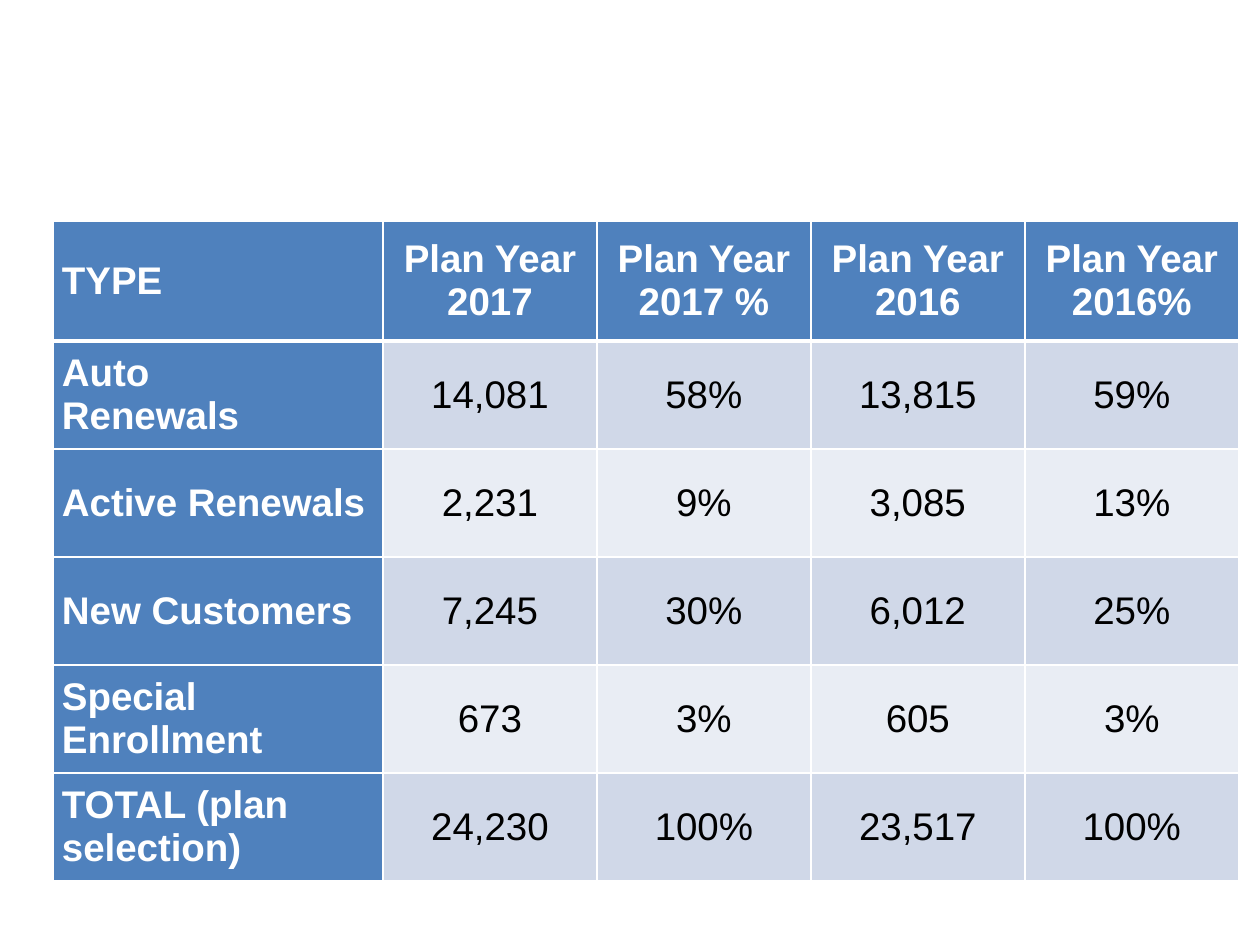
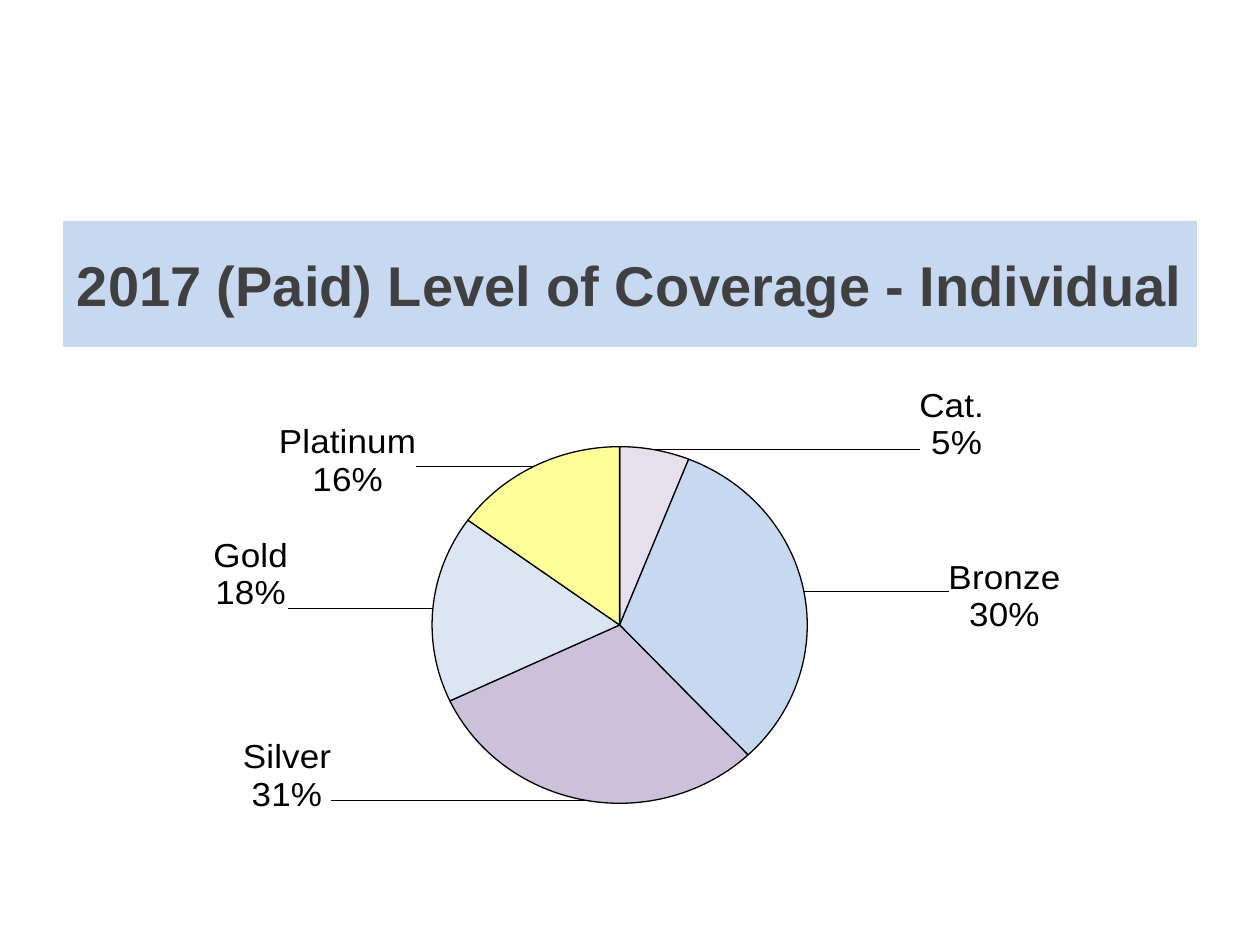
from dataclasses import dataclass

from lxml import etree
from pptx import Presentation
from pptx import util as u
from pptx.chart.data import CategoryChartData
from pptx.dml.color import RGBColor
from pptx.enum import chart as ch, text
from pptx.oxml import ns

# Shared scale, font and colours
PX = u.Inches(1) / 126
FONT = "Arial"
WHITE, BLACK, GREY = "FFFFFF", "000000", "404040"
BLUE, PALE = "4F81BD", "C6D9F1"
BANDS = ("D0D8E8", "E9EDF4")

# Plan table
COLS = [330] + [214] * 4
ROWS = [120] + [108] * 5
PLANS = [
    ("TYPE", "Plan Year 2017", "Plan Year 2017 %", "Plan Year 2016", "Plan Year 2016%"),
    ("Auto \nRenewals", "14,081", "58%", "13,815", "59%"),
    ("Active Renewals", "2,231", "9%", "3,085", "13%"),
    ("New Customers", "7,245", "30%", "6,012", "25%"),
    ("Special Enrollment", "673", "3%", "605", "3%"),
    ("TOTAL (plan selection)", "24,230", "100%", "23,517", "100%"),
]


@dataclass
class Slice:
    name: str
    value: int
    fill: str
    label: str
    dx: float  # label shift, as a share of the chart
    dy: float


LEVELS = [
    Slice("Catastrophic", 6, "E6E0EC", "Cat. \n5%", 0.23, 0.04),
    Slice("Bronze", 32, PALE, "Bronze\n30%", 0.12, 0.09),
    Slice("Silver", 30, "CCC1DA", "Silver\n31%", -0.22, -0.14),
    Slice("Gold", 17, "DCE6F2", "Gold\n18%", -0.12, 0.01),
    Slice("Platinum", 15, "FFFF99", "Platinum\n16%", -0.1, 0.08),
]


def px(n: float) -> int:
    return round(n * PX)


def rgb(code: str) -> RGBColor:
    return RGBColor.from_string(code)


def paint(part, code: str) -> None:
    part.fill.solid()
    part.fill.fore_color.rgb = rgb(code)


def style(frame, size: int, code: str, bold: bool, align=None) -> None:
    """Format every run of a text frame."""
    for para in frame.paragraphs:
        para.alignment = align
        for run in para.runs:
            font = run.font
            font.name, font.size, font.bold = FONT, u.Pt(size), bold
            font.color.rgb = rgb(code)


def edge(cell, side: str, width: int) -> None:
    """Draw one white cell border."""
    line = etree.SubElement(cell._tc.get_or_add_tcPr(), ns.qn(f"a:ln{side}"),
                            w=str(u.Pt(width)))
    fill = etree.SubElement(line, ns.qn("a:solidFill"))
    etree.SubElement(fill, ns.qn("a:srgbClr"), val=WHITE)


def place(parent, after, spots: dict) -> None:
    """Add a manual chart layout, first in its parent or after a child."""
    box = etree.Element(ns.qn("c:layout"))
    man = etree.SubElement(box, ns.qn("c:manualLayout"))
    for key, val in spots.items():
        etree.SubElement(man, ns.qn(f"c:{key}"), val=str(val))
    if after is None:
        for old in parent.findall(ns.qn("c:layout")):
            parent.remove(old)
        parent.insert(0, box)
    else:
        after.addnext(box)


def add_plans(slide) -> None:
    frame = slide.shapes.add_table(len(ROWS), len(COLS), px(53), px(221),
                                   px(sum(COLS)), px(sum(ROWS)))
    table = frame.table
    for col, wide in zip(table.columns, COLS):
        col.width = px(wide)
    for r, (row, high) in enumerate(zip(table.rows, ROWS)):
        row.height = px(high)
        for c, cell in enumerate(row.cells):
            head = r == 0 or c == 0
            cell.text_frame.paragraphs[0].text = PLANS[r][c]
            style(cell.text_frame, 22, WHITE if head else BLACK, head,
                  text.PP_ALIGN.CENTER if c else None)
            cell.vertical_anchor = text.MSO_ANCHOR.MIDDLE
            cell.margin_left = cell.margin_right = px(9)
            cell.margin_top = cell.margin_bottom = 0
            for side in "LRTB":
                thick = (r, side) in ((0, "B"), (1, "T"))
                edge(cell, side, 3 if thick else 1)
            paint(cell, BLUE if head else BANDS[(r - 1) % 2])


def add_title(slide, words: str) -> None:
    title = slide.shapes.title
    title.left, title.top, title.width, title.height = map(px, (63, 221, 1134, 126))
    paint(title, PALE)
    frame = title.text_frame
    frame.text = words
    frame.word_wrap = True
    frame.auto_size = text.MSO_AUTO_SIZE.NONE
    frame.margin_left = frame.margin_right = px(9)
    frame.vertical_anchor = text.MSO_ANCHOR.MIDDLE
    style(frame, 32, GREY, True, text.PP_ALIGN.CENTER)


def add_pie(slide) -> None:
    data = CategoryChartData(number_format="#,##0")
    data.categories = [lev.name for lev in LEVELS]
    data.add_series("Series 1", [lev.value for lev in LEVELS])
    chart = slide.shapes.add_chart(ch.XL_CHART_TYPE.PIE, px(42), px(368),
                                   px(1144), px(514), data).chart
    chart.has_title = chart.has_legend = False
    chart.font.name, chart.font.size = FONT, u.Pt(20)
    chart.font.color.rgb = rgb(BLACK)
    plot = chart.plots[0]
    plot.vary_by_categories = True
    area = chart._chartSpace.find(".//" + ns.qn("c:plotArea"))
    place(area, None, {"layoutTarget": "inner", "xMode": "edge", "yMode": "edge",
                       "x": 0.34, "y": 0.13, "w": 0.33, "h": 0.73})

    # Slices and their labels
    pie = plot.series[0]
    for i, lev in enumerate(LEVELS):
        point = pie.points[i]
        paint(point.format, lev.fill)
        point.format.line.color.rgb = rgb(BLACK)
        point.format.line.width = u.Pt(0.75)
        label = point.data_label
        label.text_frame.text = lev.label
        style(label.text_frame, 20, BLACK, False)
        label.position = ch.XL_LABEL_POSITION.OUTSIDE_END
    for tag, lev in zip(pie._element.iter(ns.qn("c:dLbl")), LEVELS):
        place(tag, tag.find(ns.qn("c:idx")), {"x": lev.dx, "y": lev.dy})


def main() -> None:
    deck = Presentation()
    deck.slide_width, deck.slide_height = px(1260), px(945)
    add_plans(deck.slides.add_slide(deck.slide_layouts[6]))
    slide = deck.slides.add_slide(deck.slide_layouts[5])
    add_title(slide, "2017 (Paid) Level of Coverage - Individual")
    add_pie(slide)
    deck.save("out.pptx")


if __name__ == "__main__":
    main()
